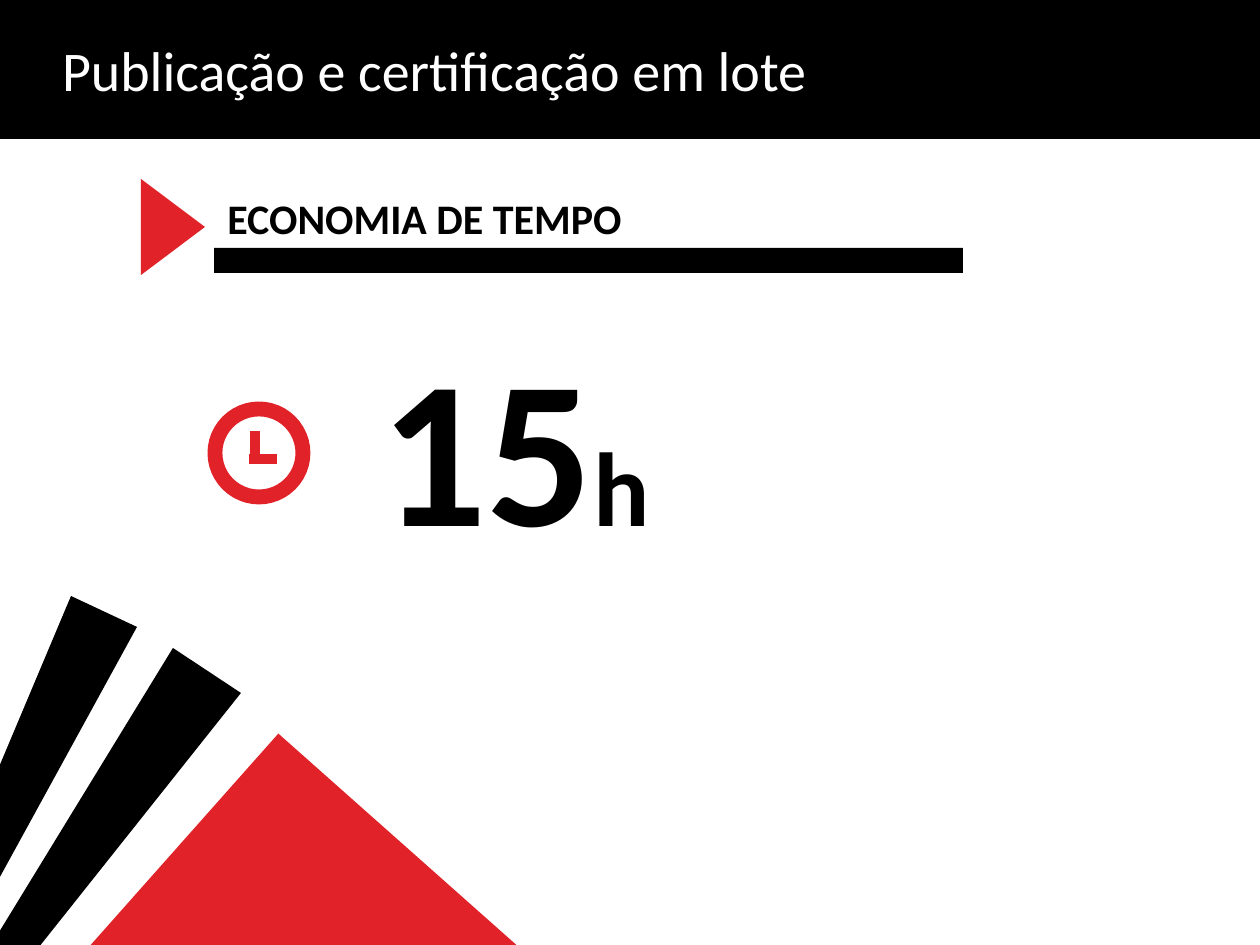
from dataclasses import dataclass

from lxml import etree
from pptx import Presentation
from pptx.dml.color import RGBColor
from pptx.enum.shapes import MSO_CONNECTOR, MSO_SHAPE
from pptx.enum.text import MSO_ANCHOR, MSO_AUTO_SIZE, PP_ALIGN
from pptx.oxml.ns import qn
from pptx.util import Pt

RECTANGLE = MSO_SHAPE.RECTANGLE
TRIANGLE = MSO_SHAPE.ISOSCELES_TRIANGLE
OVAL = MSO_SHAPE.OVAL
STRAIGHT = MSO_CONNECTOR.STRAIGHT
MIDDLE = MSO_ANCHOR.MIDDLE
FIT_SHAPE = MSO_AUTO_SIZE.SHAPE_TO_FIT_TEXT
LEFT = PP_ALIGN.LEFT

EMU_PER_PX = 914400 // 126
FONT = "Calibri"
BLACK = "000000"
WHITE = "FFFFFF"
RED = "E12229"


@dataclass(frozen=True)
class Box:
    left: int
    top: int
    width: int
    height: int

    def emu(self) -> tuple[int, ...]:
        return tuple(map(px, (self.left, self.top, self.width, self.height)))


@dataclass(frozen=True)
class Hand:
    start: tuple[int, int]
    end: tuple[int, int]
    weight: float


@dataclass(frozen=True)
class TextRun:
    text: str
    size: int


CLOCK_FACE = Box(215, 409, 88, 88)
CLOCK_HANDS = (
    Hand((255, 431), (255, 464), 5.75),
    Hand((277, 459), (249, 459), 6),
)
RAYS = (
    ((71, 596), (137, 627), (-204, 1249)),
    ((173, 648), (241, 693), (-174, 1215)),
)


def px(value: int) -> int:
    return value * EMU_PER_PX


def color(value: str) -> RGBColor:
    return RGBColor.from_string(value)


def paint(shape, fill: str) -> None:
    shape.fill.solid()
    shape.fill.fore_color.rgb = color(fill)
    shape.line.fill.background()
    shape.shadow.inherit = False


def add_block(shapes, kind, box: Box, fill: str, rotation: float = 0) -> None:
    shape = shapes.add_shape(kind, *box.emu())
    shape.rotation = rotation
    paint(shape, fill)


def add_text(shapes, box: Box, runs: tuple[TextRun, ...], wrap: bool) -> None:
    frame = shapes.add_textbox(*box.emu()).text_frame
    frame.word_wrap = wrap
    frame.auto_size = FIT_SHAPE
    paragraph = frame.paragraphs[0]
    paragraph.font.name = FONT
    paragraph.font.bold = True
    paragraph.font.color.rgb = color(BLACK)
    for text_run in runs:
        run = paragraph.add_run()
        run.text = text_run.text
        run.font.size = Pt(text_run.size)


def add_title(slide) -> None:
    title = slide.shapes.title
    title.left, title.top, title.width, title.height = Box(0, 0, 1260, 139).emu()
    paint(title, BLACK)
    frame = title.text_frame
    frame.text = "Publicação e certificação em lote"
    frame.vertical_anchor = MIDDLE
    frame.margin_left = px(62)
    paragraph = frame.paragraphs[0]
    paragraph.alignment = LEFT
    paragraph.font.name = FONT
    paragraph.font.size = Pt(32)
    paragraph.font.color.rgb = color(WHITE)


def add_clock(slide) -> None:
    shapes = slide.shapes.add_group_shape().shapes
    face = shapes.add_shape(OVAL, *CLOCK_FACE.emu())
    face.fill.background()
    face.line.color.rgb = color(RED)
    face.line.width = Pt(8.5)
    face.shadow.inherit = False
    for hand in CLOCK_HANDS:
        connector = shapes.add_connector(STRAIGHT, *map(px, hand.start + hand.end))
        connector.line.color.rgb = color(RED)
        connector.line.width = Pt(hand.weight)
        etree.SubElement(connector._element.spPr, qn("a:effectLst"))


def add_corner_art(slide) -> None:
    shapes = slide.shapes.add_group_shape().shapes
    for ray in RAYS:
        first, *others = [(px(x), px(y)) for x, y in ray]
        builder = shapes.build_freeform(*first)
        builder.add_line_segments(others, close=True)
        paint(builder.convert_to_shape(), BLACK)
    add_block(shapes, RECTANGLE, Box(-54, 883, 724, 722), RED, 311.6)


def main() -> None:
    presentation = Presentation()
    presentation.slide_width = px(1260)
    presentation.slide_height = px(945)
    slide = presentation.slides.add_slide(presentation.slide_layouts[5])
    add_title(slide)
    add_text(
        slide.shapes,
        Box(368, 310, 297, 267),
        (TextRun("15", 120), TextRun("h", 60)),
        wrap=False,
    )
    add_block(slide.shapes, TRIANGLE, Box(125, 195, 96, 64), RED, 90)
    add_text(
        slide.shapes,
        Box(215, 186, 442, 63),
        (TextRun("ECONOMIA DE TEMPO", 24),),
        wrap=True,
    )
    add_block(slide.shapes, RECTANGLE, Box(214, 248, 749, 25), BLACK)
    add_clock(slide)
    add_corner_art(slide)
    presentation.save("out.pptx")


if __name__ == "__main__":
    main()
